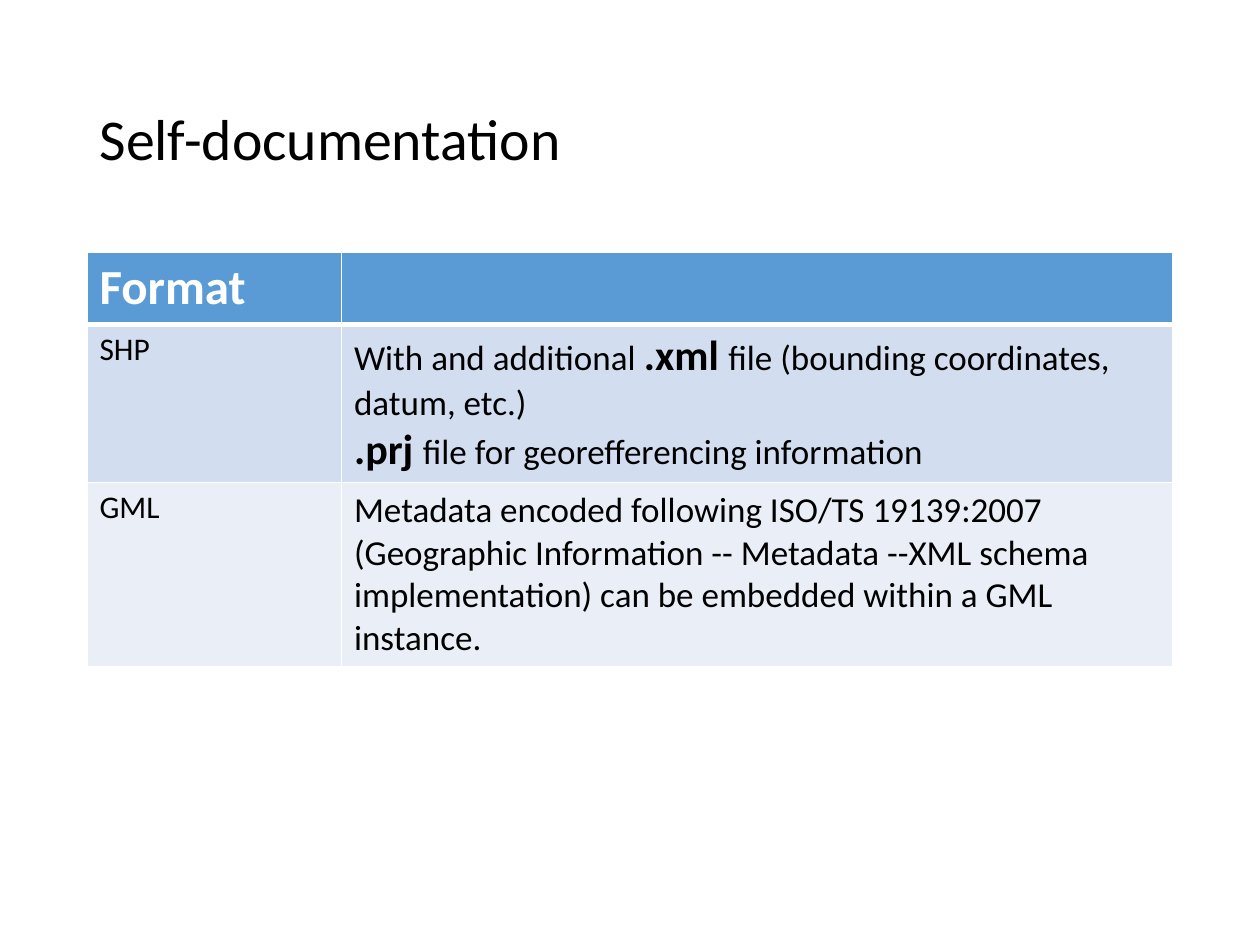
from dataclasses import dataclass

from lxml.etree import SubElement
from pptx import Presentation
from pptx.dml.color import RGBColor
from pptx.enum.text import MSO_ANCHOR, MSO_AUTO_SIZE, PP_ALIGN
from pptx.oxml.ns import qn
from pptx.util import Inches, Pt


@dataclass(frozen=True)
class Theme:
    font: str = "Calibri"
    ink: str = "000000"
    white: str = "FFFFFF"
    header: str = "5B9BD5"
    bands: tuple = ("D2DEEF", "EAEFF7")
    title_size: int = 33
    header_size: int = 28
    format_size: int = 18
    detail_size: int = 20
    extension_size: int = 24
    thin: int = 1
    thick: int = 3


THEME = Theme()
TITLE_BOX = (0.69, 0.4, 8.62, 1.45)
TABLE_BOX = (0.69, 2, 8.62, 1.23)
FORMAT_WIDTH = 2.02

# Each detail paragraph is a list of (text, is_extension) spans.
FORMATS = [
    ("SHP", [
        [("With and additional ", False), (".xml ", True),
         ("file (bounding coordinates, datum, etc.)", False)],
        [(".prj ", True), ("file for georefferencing information", False)],
    ]),
    ("GML", [
        [("Metadata encoded following ISO/TS 19139:2007 (Geographic Information "
          "-- Metadata --XML schema implementation) can be embedded within a "
          "GML instance.", False)],
    ]),
]


def add_span(para, text, size, color=THEME.ink, bold=False):
    span = para.add_run()
    span.text = text
    span.font.name = THEME.font
    span.font.size = Pt(size)
    span.font.bold = bold
    span.font.color.rgb = RGBColor.from_string(color)


def style_cell(cell, fill, top, bottom):
    """Draw the white borders, then the fill, as the schema orders them."""
    properties = cell._tc.get_or_add_tcPr()
    widths = {"lnL": THEME.thin, "lnR": THEME.thin, "lnT": top, "lnB": bottom}
    for tag, width in widths.items():
        line = SubElement(properties, qn(f"a:{tag}"), w=str(Pt(width)))
        solid = SubElement(line, qn("a:solidFill"))
        SubElement(solid, qn("a:srgbClr"), val=THEME.white)
    cell.fill.solid()
    cell.fill.fore_color.rgb = RGBColor.from_string(fill)


def place_title(page, box, text):
    title = page.shapes.title
    title.left, title.top, title.width, title.height = map(Inches, box)
    frame = title.text_frame
    frame.word_wrap = True
    frame.auto_size = MSO_AUTO_SIZE.NONE
    frame.vertical_anchor = MSO_ANCHOR.MIDDLE
    para = frame.paragraphs[0]
    para.alignment = PP_ALIGN.LEFT
    para.line_spacing = 0.9
    add_span(para, text, THEME.title_size)


def place_format_table(page, box):
    """Rows start at a minimum height and grow with their text."""
    table = page.shapes.add_table(len(FORMATS) + 1, 2, *map(Inches, box)).table
    table.columns[0].width = Inches(FORMAT_WIDTH)
    table.columns[1].width = Inches(box[2] - FORMAT_WIDTH)

    for cell in table.rows[0].cells:
        style_cell(cell, THEME.header, THEME.thin, THEME.thick)
    add_span(table.cell(0, 0).text_frame.paragraphs[0], "Format",
             THEME.header_size, THEME.white, bold=True)

    for row, (name, details) in enumerate(FORMATS, start=1):
        fill = THEME.bands[(row - 1) % len(THEME.bands)]
        top = THEME.thick if row == 1 else THEME.thin
        for cell in table.rows[row].cells:
            style_cell(cell, fill, top, THEME.thin)
        add_span(table.cell(row, 0).text_frame.paragraphs[0], name, THEME.format_size)

        frame = table.cell(row, 1).text_frame
        for index, spans in enumerate(details):
            para = frame.add_paragraph() if index else frame.paragraphs[0]
            for text, is_extension in spans:
                size = THEME.extension_size if is_extension else THEME.detail_size
                add_span(para, text, size, bold=is_extension)


def main():
    deck = Presentation()
    deck.slide_width, deck.slide_height = Inches(10), Inches(7.5)
    page = deck.slides.add_slide(deck.slide_layouts[5])
    place_title(page, TITLE_BOX, "Self-documentation")
    place_format_table(page, TABLE_BOX)
    deck.save("out.pptx")


if __name__ == "__main__":
    main()
